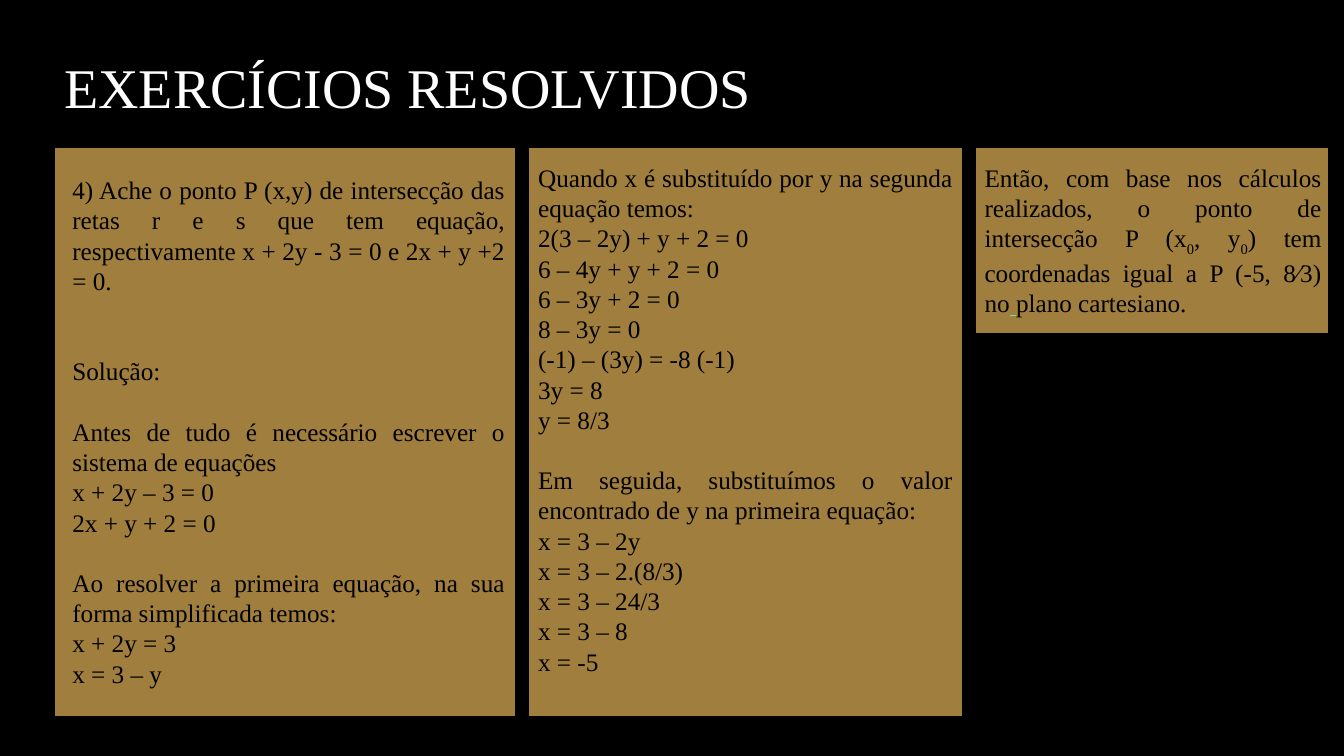
import pptx
import pptx.util
import pptx.dml.color
import pptx.enum.shapes
import pptx.enum.text
import pptx.oxml.ns
import lxml.etree
import dataclasses

Pt = pptx.util.Pt
RGB = pptx.dml.color.RGBColor.from_string
ALIGN = pptx.enum.text.PP_ALIGN
ANCHOR = pptx.enum.text.MSO_ANCHOR


@dataclasses.dataclass
class Theme:
    font: str = "Times New Roman"
    back: str = "000000"
    gold: str = "E5B458"
    ink: str = "000000"
    head: str = "FFFFFF"
    mint: str = "71DDAB"
    title: int = 40
    body: int = 18
    line: float = 21.56


theme = Theme()
deck = pptx.Presentation()
deck.slide_width, deck.slide_height = Pt(960), Pt(540)
slide = deck.slides.add_slide(deck.slide_layouts[6])
slide.background.fill.solid()
slide.background.fill.fore_color.rgb = RGB(theme.back)


def panel(left, top, width, height):
    """Draw a gold rectangle at 70 % opacity."""
    box = slide.shapes.add_shape(
        pptx.enum.shapes.MSO_SHAPE.RECTANGLE,
        Pt(left), Pt(top), Pt(width), Pt(height))
    box.shadow.inherit = False
    box.fill.solid()
    box.fill.fore_color.rgb = RGB(theme.gold)
    tint = box.fill._xPr.find(".//" + pptx.oxml.ns.qn("a:srgbClr"))
    lxml.etree.SubElement(tint, pptx.oxml.ns.qn("a:alpha"), val="70000")
    box.line.color.rgb = RGB(theme.ink)
    box.line.width = Pt(1.5)


def write(left, top, width, height, lines, size, tone, align):
    """Add a text box from (blank lines before, text) pairs."""
    frame = slide.shapes.add_textbox(
        Pt(left), Pt(top), Pt(width), Pt(height)).text_frame
    frame.word_wrap = True
    for i, (gap, text) in enumerate(lines):
        para = frame.add_paragraph() if i else frame.paragraphs[0]
        para.text = text
        para.alignment = align
        para.font.name = theme.font
        para.font.size = Pt(size)
        para.font.color.rgb = RGB(tone)
        if gap:
            para.space_before = Pt(gap * theme.line)
    return frame


title = write(38.9, 18, 788.4, 87.1, [(0, "EXERCÍCIOS RESOLVIDOS")],
              theme.title, theme.head, ALIGN.LEFT)
title.vertical_anchor = ANCHOR.MIDDLE

task = [
    (0, "4) Ache o ponto P (x,y) de intersecção das retas r e s que tem "
        "equação, respectivamente x + 2y - 3 = 0 e 2x + y +2 = 0."),
    (2, "Solução:"),
    (1, "Antes de tudo é necessário escrever o sistema de equações"),
    (0, "x + 2y – 3 = 0"),
    (0, "2x + y + 2 = 0"),
    (1, "Ao resolver a primeira equação, na sua forma simplificada temos:"),
    (0, "x + 2y = 3"),
    (0, "x = 3 – y"),
]
steps = [
    (0, "Quando x é substituído por y na segunda equação temos:"),
    (0, "2(3 – 2y) + y + 2 = 0"),
    (0, "6 – 4y + y + 2 = 0"),
    (0, "6 – 3y + 2 = 0"),
    (0, "8 – 3y = 0"),
    (0, "(-1) – (3y) = -8 (-1)"),
    (0, "3y = 8"),
    (0, "y = 8/3"),
    (1, "Em seguida, substituímos o valor encontrado de y na primeira "
        "equação:"),
    (0, "x = 3 – 2y"),
    (0, "x = 3 – 2.(8/3)"),
    (0, "x = 3 – 24/3"),
    (0, "x = 3 – 8"),
    (0, "x = -5"),
]

# panel left, width, height; text left, top, width, height; lines
columns = [
    (38.9, 329.8, 406.8, 44.6, 121, 323.3, 378, task),
    (377.3, 310.3, 406.8, 377.3, 112.3, 310.3, 378, steps),
    (696.2, 253.4, 133.2, 696.2, 112.3, 254.9, 116.6, [(0, "")]),
]
for left, width, height, x, y, w, h, lines in columns:
    panel(left, 105.1, width, height)
    frame = write(x, y, w, h, lines, theme.body, theme.ink, ALIGN.JUSTIFY)

result = frame.paragraphs[0]
parts = [
    ("Então, com base nos cálculos realizados, o ponto de intersecção P (x",
     ""),
    ("0", "sub"),
    (", y", ""),
    ("0", "sub"),
    (") tem coordenadas igual a P (-5, 8⁄3) no", ""),
    (" ", "under"),
    ("plano cartesiano.", ""),
]
for text, style in parts:
    run = result.add_run()
    run.text = text
    if style == "sub":
        run._r.get_or_add_rPr().set("baseline", "-25000")
    elif style == "under":
        run.font.underline = True
        run.font.color.rgb = RGB(theme.mint)

deck.save("out.pptx")
